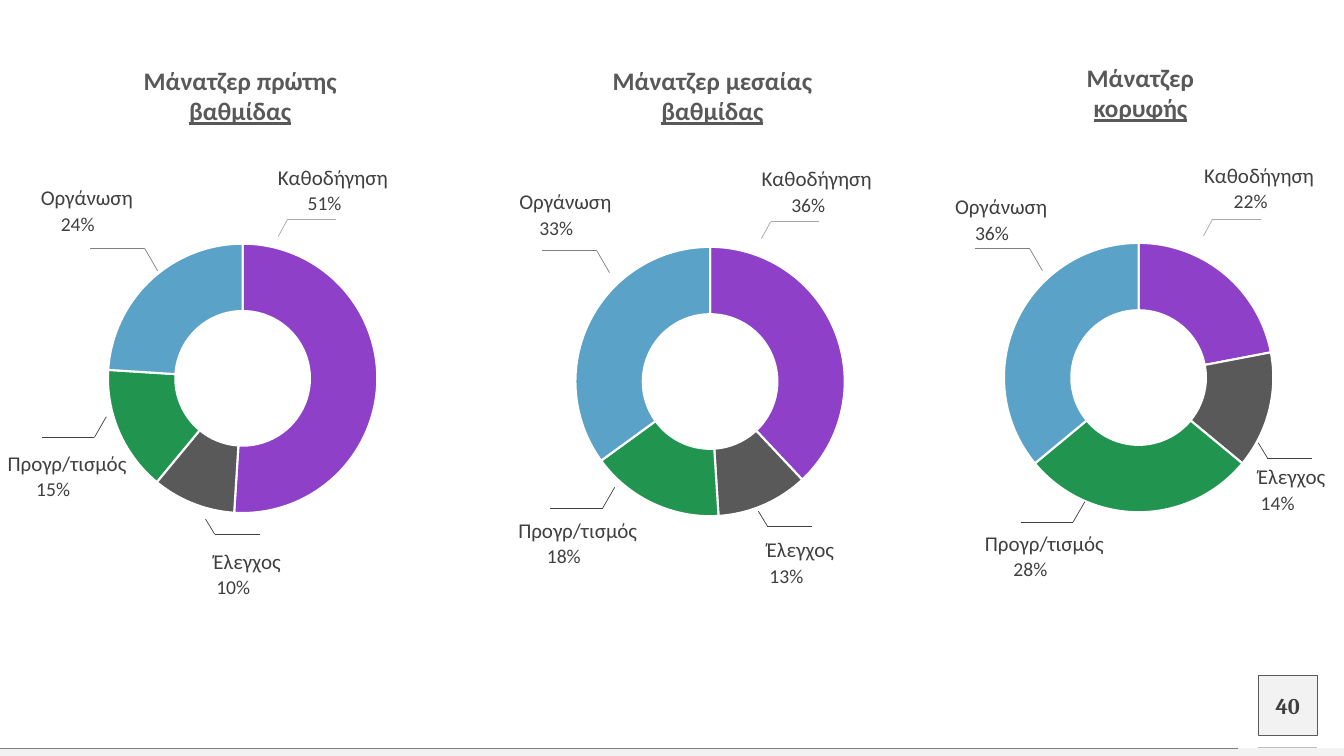
import pptx
import pptx.chart.data
import pptx.dml.color
import pptx.enum.chart
import pptx.enum.shapes
import pptx.enum.text
import pptx.oxml.ns
import pptx.oxml.xmlchemy
import pptx.util
from pptx.util import Cm

COLORS = {
    "purple": "8E40C8", "dark": "595959", "green": "219550", "blue": "5AA2C8",
    "text": "404040", "black": "000000", "white": "FFFFFF", "panel": "F2F2F2",
    "grey": "808080", "light": "A6A6A6", "pale": "BFBFBF",
}
SLIDE_WIDTH, SLIDE_HEIGHT = 33.87, 19.05
CHART_WIDTH, CHART_HEIGHT = 9.53, 7.49
HOLE_SIZE = 86

CATEGORIES = [
    {"name": "Καθοδήγηση", "fill": "purple", "line": "light", "width": 2.95,
     "arm": 1.22, "tip": (-0.23, 0.42), "percent_shift": -0.21},
    {"name": "Έλεγχος", "fill": "dark", "line": "text", "width": 2.5,
     "arm": 1.13, "tip": (-0.23, -0.38), "percent_shift": -0.35},
    {"name": "Προγρ/τισμός", "fill": "green", "line": "text", "width": 3.2,
     "arm": -1.32, "tip": (0.3, -0.52), "percent_shift": -0.35},
    {"name": "Οργάνωση", "fill": "blue", "line": "grey", "width": 2.95,
     "arm": -1.37, "tip": (0.33, 0.57), "percent_shift": -0.23},
]

PANELS = [
    {"box": (1.35, 5.79), "heading": ("Μάνατζερ πρώτης ", "βαθμίδας"),
     "heading_box": (1.38, -4.14, 6.65), "values": (51, 10, 15, 24),
     "percents": ("51%", "10%", "15%", "24%"),
     "elbows": ((5.89, -0.25), (4.06, 7.67), (1.03, 5.23), (2.29, 0.46)),
     "labels": ((7.04, -1.65), (4.88, 8.03), (0.34, 5.56), (0.84, -1.14))},
    {"box": (13.13, 5.87), "heading": ("Μάνατζερ μεσαίας ", "βαθμίδας"),
     "heading_box": (1.5, -4.22, 6.65), "values": (38, 11, 16, 35),
     "percents": ("36%", "13%", "18%", "33%"),
     "elbows": ((6.29, -0.28), (6.21, 7.39), (2.06, 6.93), (1.9, 0.43)),
     "labels": ((7.45, -1.7), (7.04, 7.65), (1.43, 7.16), (1.12, -1.12))},
    {"box": (23.93, 5.77), "heading": ("Μάνατζερ ", "κορυφής"),
     "heading_box": (2.51, -4.2, 4.6), "values": (22, 14, 28, 36),
     "percents": ("22%", "14%", "28%", "36%"),
     "elbows": ((6.63, -0.25), (8.01, 5.77), (3.11, 7.39), (2.01, 0.48)),
     "labels": ((7.8, -1.68), (8.62, 5.92), (2.39, 7.59), (1.3, -0.89))},
]


def rgb(name):
    """Return the named colour."""
    return pptx.dml.color.RGBColor.from_string(COLORS[name])


def write_run(paragraph, text, size=15, color="text", font="Calibri", bold=False, underline=False):
    """Append formatted text to a paragraph."""
    run = paragraph.add_run()
    run.text = text
    run.font.size = pptx.util.Pt(size)
    run.font.name = font
    run.font.bold = bold
    run.font.underline = underline
    run.font.color.rgb = rgb(color)


def prepare_text(shape):
    """Clear a shape's text margins and return its centred first paragraph."""
    frame = shape.text_frame
    frame.word_wrap = True
    frame.margin_left = frame.margin_right = frame.margin_top = frame.margin_bottom = 0
    paragraph = frame.paragraphs[0]
    paragraph.alignment = pptx.enum.text.PP_ALIGN.CENTER
    return paragraph


def add_text(slide, left, top, width, height):
    """Add a text box and return its paragraph."""
    return prepare_text(slide.shapes.add_textbox(Cm(left), Cm(top), Cm(width), Cm(height)))


def add_line(slide, start, end, color, width=0.5):
    """Draw a straight line between two points."""
    line = slide.shapes.add_connector(
        pptx.enum.shapes.MSO_CONNECTOR.STRAIGHT,
        Cm(start[0]), Cm(start[1]), Cm(end[0]), Cm(end[1]))
    line.line.color.rgb = rgb(color)
    line.line.width = pptx.util.Pt(width)
    line._element.spPr.append(pptx.oxml.xmlchemy.OxmlElement("a:effectLst"))


def add_rectangle(slide, left, top, width, height, outline=None):
    """Draw a pale rectangle with an optional thin outline."""
    shape = slide.shapes.add_shape(
        pptx.enum.shapes.MSO_SHAPE.RECTANGLE, Cm(left), Cm(top), Cm(width), Cm(height))
    shape.shadow.inherit = False
    shape.fill.solid()
    shape.fill.fore_color.rgb = rgb("panel")
    if outline:
        shape.line.color.rgb = rgb(outline)
        shape.line.width = pptx.util.Pt(0.25)
    else:
        shape.line.fill.background()
    return shape


def add_doughnut(slide, left, top, values):
    """Draw the doughnut chart of one panel."""
    data = pptx.chart.data.CategoryChartData()
    data.categories = [str(number) for number in range(1, len(values) + 1)]
    data.add_series("Series 1", values)
    chart = slide.shapes.add_chart(
        pptx.enum.chart.XL_CHART_TYPE.DOUGHNUT, Cm(left), Cm(top),
        Cm(CHART_WIDTH), Cm(CHART_HEIGHT), data).chart
    chart.has_legend = False
    chart.has_title = False
    chart.font.size = pptx.util.Pt(10)
    chart.font.name = "Calibri"
    chart.font.color.rgb = rgb("black")
    plot = chart.plots[0]
    plot.vary_by_categories = True
    plot._element.find(pptx.oxml.ns.qn("c:holeSize")).set("val", str(HOLE_SIZE))
    for index, category in enumerate(CATEGORIES):
        point = plot.series[0].points[index]
        point.format.fill.solid()
        point.format.fill.fore_color.rgb = rgb(category["fill"])
        point.format.line.color.rgb = rgb("white")
        point.format.line.width = pptx.util.Pt(1.5)


def add_callout(slide, category, percent, elbow, label):
    """Place a leader line with the category name and its percentage."""
    x, y = elbow
    add_line(slide, (x + category["arm"], y), elbow, category["line"])
    add_line(slide, elbow, (x + category["tip"][0], y + category["tip"][1]), category["line"])
    center, top = label
    width = category["width"]
    write_run(add_text(slide, center - width / 2, top, width, 0.46), category["name"])
    percent_left = center + category["percent_shift"] - 0.75
    write_run(add_text(slide, percent_left, top + 0.68, 1.5, 0.46), percent, size=14)


def add_panel(slide, panel):
    """Place a heading, a doughnut and its callouts relative to the panel's box."""
    left, top = panel["box"]
    add_doughnut(slide, left, top, panel["values"])
    x, y, width = panel["heading_box"]
    heading = add_text(slide, left + x, top + y, width, 1.55)
    first, last = panel["heading"]
    write_run(heading, first, size=18, color="dark", bold=True)
    write_run(heading, last, size=18, color="dark", bold=True, underline=True)
    for category, percent, elbow, label in zip(
            CATEGORIES, panel["percents"], panel["elbows"], panel["labels"]):
        add_callout(slide, category, percent,
                    (left + elbow[0], top + elbow[1]), (left + label[0], top + label[1]))


def add_footer(slide, left, top, width, height):
    """Draw the bottom band and the page number box above it."""
    add_rectangle(slide, left, top, width, height)
    add_line(slide, (left, top), (left + 31.19, top), "grey", 0.25)
    number_left = left + 31.7
    add_line(slide, (number_left, top - 0.03), (number_left + 1.5, top - 0.03), "pale")
    number = add_rectangle(slide, number_left, top - 1.83, 1.5, 1.5, "dark")
    number.text_frame.vertical_anchor = pptx.enum.text.MSO_ANCHOR.MIDDLE
    write_run(prepare_text(number), "40", size=16, font="Cambria", bold=True)


def main():
    """Build and save the presentation."""
    presentation = pptx.Presentation()
    presentation.slide_width = Cm(SLIDE_WIDTH)
    presentation.slide_height = Cm(SLIDE_HEIGHT)
    slide = presentation.slides.add_slide(presentation.slide_layouts[6])
    add_footer(slide, 0, 18.85, SLIDE_WIDTH, 0.2)
    for panel in PANELS:
        add_panel(slide, panel)
    presentation.save("out.pptx")


if __name__ == "__main__":
    main()
